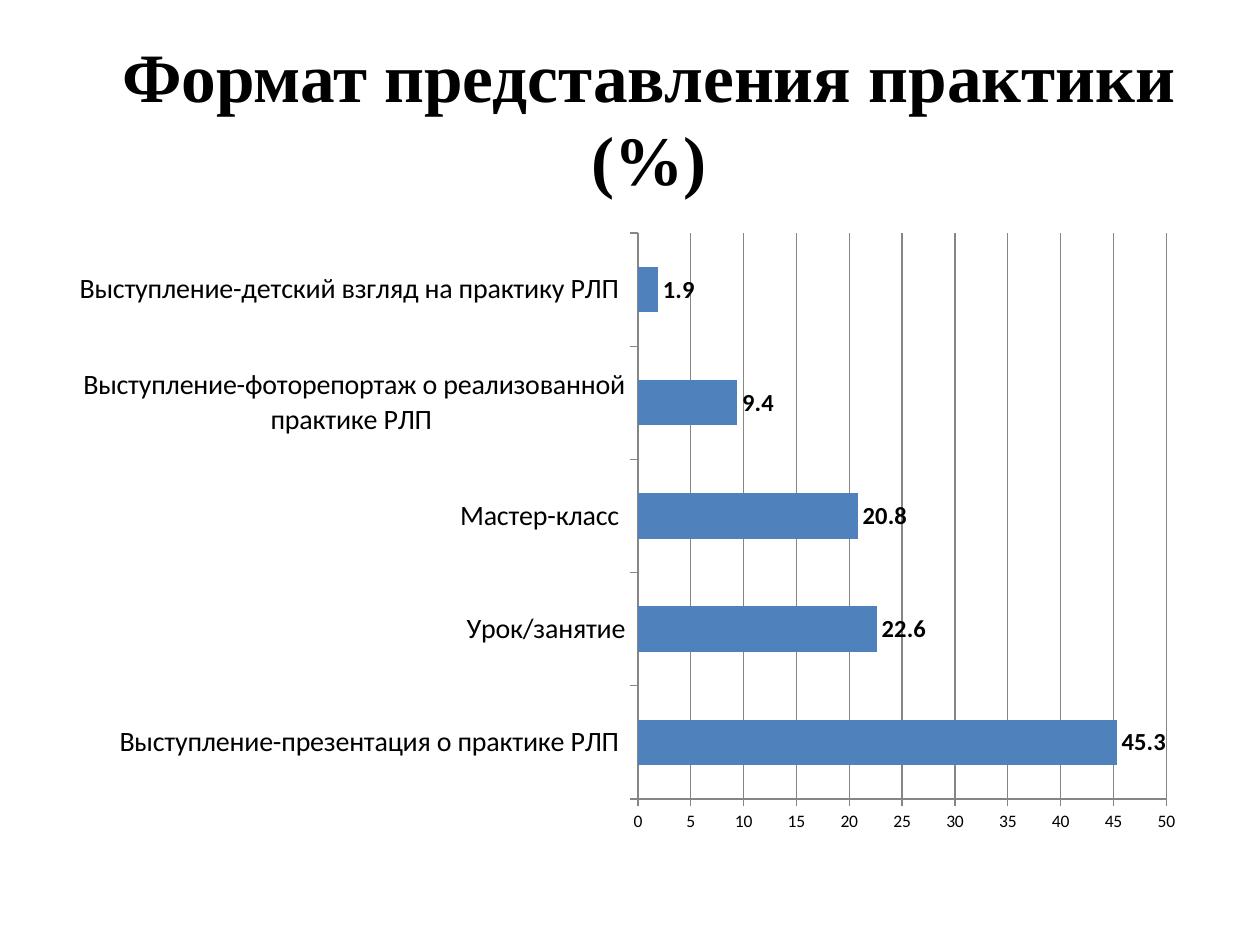
from lxml import etree
from pptx import Presentation
from pptx.chart.data import CategoryChartData
from pptx.dml.color import RGBColor
from pptx.enum.chart import XL_CHART_TYPE, XL_LABEL_POSITION, XL_TICK_MARK
from pptx.enum.text import MSO_ANCHOR, MSO_AUTO_SIZE, PP_ALIGN
from pptx.oxml.ns import qn
from pptx.util import Pt

BAR = XL_CHART_TYPE.BAR_CLUSTERED
OUTSIDE_END = XL_LABEL_POSITION.OUTSIDE_END
TICK_OUTSIDE = XL_TICK_MARK.OUTSIDE
MIDDLE = MSO_ANCHOR.MIDDLE
NO_AUTOFIT = MSO_AUTO_SIZE.NONE
CENTER = PP_ALIGN.CENTER

EMU_PER_PX = 914400 / 126
TITLE_ONLY = 5
COLORS = {"text": "000000", "bar": "4F81BD", "axis": "868686"}

FORMATS = [
    ("Выступление-презентация о практике РЛП ", 45.3),
    ("Урок/занятие", 22.6),
    ("Мастер-класс ", 20.8),
    ("Выступление-фоторепортаж о реализованной практике РЛП ", 9.4),
    ("Выступление-детский взгляд на практику РЛП ", 1.9),
]


def px(length):
    return round(length * EMU_PER_PX)


def color(name):
    return RGBColor.from_string(COLORS[name])


def style_font(font, name, size, bold=False):
    font.name = name
    font.size = Pt(size)
    font.bold = bold
    font.color.rgb = color("text")


def style_line(line):
    line.color.rgb = color("axis")
    line.width = Pt(0.75)


def set_plot_layout(chart, **fractions):
    """Fix the inner plot area as fractions of the chart box."""
    plot_area = chart.plots[0]._element.getparent()
    for old_layout in plot_area.findall(qn("c:layout")):
        plot_area.remove(old_layout)
    layout = etree.Element(qn("c:layout"))
    manual = etree.SubElement(layout, qn("c:manualLayout"))
    settings = {"layoutTarget": "inner", "xMode": "edge", "yMode": "edge", **fractions}
    for tag, value in settings.items():
        etree.SubElement(manual, qn(f"c:{tag}")).set("val", str(value))
    plot_area.insert(0, layout)


def add_title(slide, left, top, width, height):
    title = slide.shapes.title
    title.left, title.top = px(left), px(top)
    title.width, title.height = px(width), px(height)
    frame = title.text_frame
    frame.text = "Формат представления практики (%)"
    frame.word_wrap = True
    frame.auto_size = NO_AUTOFIT
    frame.vertical_anchor = MIDDLE
    paragraph = frame.paragraphs[0]
    paragraph.alignment = CENTER
    style_font(paragraph.font, "Times New Roman", 39.6, bold=True)


def add_format_chart(slide, left, top, width, height):
    data = CategoryChartData()
    data.categories = [name for name, _ in FORMATS]
    data.add_series("Series 1", [share for _, share in FORMATS])
    chart = slide.shapes.add_chart(
        BAR, px(left), px(top), px(width), px(height), data
    ).chart
    chart.has_title = False
    chart.has_legend = False
    style_font(chart.font, "Calibri", 10)
    set_plot_layout(chart, x=0.507, y=0.021, w=0.466, h=0.907)

    # Bars and their values
    plot = chart.plots[0]
    plot.gap_width = 150
    plot.vary_by_categories = False
    fill = plot.series[0].format.fill
    fill.solid()
    fill.fore_color.rgb = color("bar")
    plot.has_data_labels = True
    labels = plot.data_labels
    labels.show_value = True
    labels.position = OUTSIDE_END
    style_font(labels.font, "Calibri", 14, bold=True)

    # Axes and gridlines
    for axis, size in ((chart.category_axis, 16), (chart.value_axis, 10)):
        axis.major_tick_mark = TICK_OUTSIDE
        style_font(axis.tick_labels.font, "Calibri", size)
        style_line(axis.format.line)
    chart.category_axis.has_major_gridlines = False
    value_axis = chart.value_axis
    value_axis.minimum_scale, value_axis.maximum_scale = 0, 50
    value_axis.major_unit = 5
    value_axis.has_major_gridlines = True
    style_line(value_axis.major_gridlines.format.line)


def main():
    presentation = Presentation()
    presentation.slide_width, presentation.slide_height = px(1260), px(945)
    slide = presentation.slides.add_slide(presentation.slide_layouts[TITLE_ONLY])
    add_title(slide, 63, 38, 1172, 157)
    add_format_chart(slide, 63, 220, 1134, 624)
    presentation.save("out.pptx")


if __name__ == "__main__":
    main()
